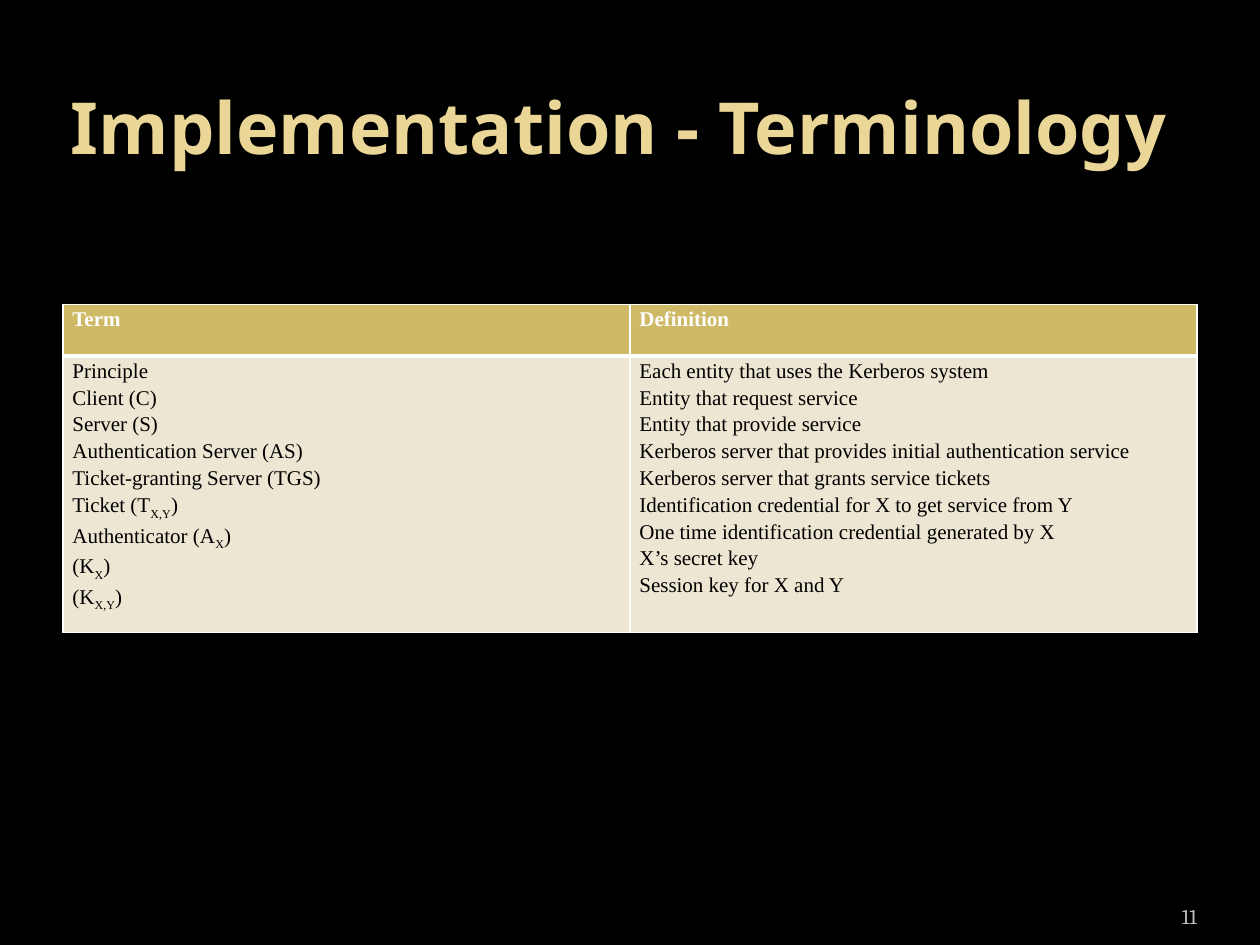
from lxml import etree
from pptx import Presentation
from pptx.dml.color import RGBColor
from pptx.enum import text as t
from pptx.oxml.ns import qn
from pptx.util import Cm, Pt

SERIF = "Times New Roman"
TERMS = [
    ("Principle", "Each entity that uses the Kerberos system"),
    ("Client (C)", "Entity that request service"),
    ("Server (S)", "Entity that provide service"),
    ("Authentication Server (AS)",
     "Kerberos server that provides initial authentication service"),
    ("Ticket-granting Server (TGS)", "Kerberos server that grants service tickets"),
    ("Ticket (T|X,Y|)", "Identification credential for X to get service from Y"),
    ("Authenticator (A|X|)", "One time identification credential generated by X"),
    ("(K|X|)", "X’s secret key"),
    ("(K|X,Y|)", "Session key for X and Y"),
]


def color(code):
    return RGBColor.from_string(code)


def style(run, size, face, code, bold=False):
    font = run.font
    font.size, font.name, font.bold = Pt(size), face, bold
    font.color.rgb = color(code)


def label(slide, box, words, align, anchor, look, pad=0.25):
    frame = slide.shapes.add_textbox(*map(Cm, box)).text_frame
    frame.word_wrap = True
    frame.vertical_anchor = anchor
    frame.margin_left = frame.margin_right = Cm(pad)
    frame.text = words
    para = frame.paragraphs[0]
    para.alignment = align
    style(para.runs[0], *look)


def border(cell, widths):
    props = cell._tc.get_or_add_tcPr()
    for spot, (side, width) in enumerate(zip("LRTB", widths)):
        line = etree.Element(qn(f"a:ln{side}"), w=str(Pt(width)))
        fill = etree.SubElement(line, qn("a:solidFill"))
        etree.SubElement(fill, qn("a:srgbClr"), val="FFFFFF")
        props.insert(spot, line)


def fill_cell(cell, lines, back, ink, bold, widths):
    cell.margin_left = cell.margin_right = Cm(0.19)
    cell.margin_top = cell.margin_bottom = 0
    cell.fill.solid()
    cell.fill.fore_color.rgb = color(back)
    border(cell, widths)
    frame = cell.text_frame
    frame.text = "\n".join(lines)
    for para, line in zip(frame.paragraphs, lines):
        para.line_spacing = 1.15
        parts = line.split("|")
        para.runs[0].text = parts[0]
        for part in parts[1:]:
            para.add_run().text = part
        for spot, run in enumerate(para.runs):
            style(run, 12, SERIF, ink, bold)
            if spot % 2:
                run.font._element.set("baseline", "-25000")


def glossary(slide):
    table = slide.shapes.add_table(
        2, 2, Cm(1.27), Cm(6.14), Cm(22.86), Cm(6.19)).table
    table.rows[0].height = Cm(1.04)
    table.rows[1].height = Cm(5.15)
    columns = zip(("Term", "Definition"), zip(*TERMS))
    for col, (head, lines) in enumerate(columns):
        fill_cell(table.cell(0, col), [head], "CEB966", "FFFFFF", True, (1, 1, 1, 3))
        fill_cell(table.cell(1, col), lines, "EDE6D3", "000000", False, (1, 1, 3, 1))


def main():
    deck = Presentation()
    deck.slide_width, deck.slide_height = Cm(25.4), Cm(19.05)
    slide = deck.slides.add_slide(deck.slide_layouts[6])
    back = slide.background.fill
    back.solid()
    back.fore_color.rgb = color("000000")
    label(slide, (0.84, 0.64, 23.28, 3.81), "Implementation - Terminology",
          t.PP_ALIGN.CENTER, t.MSO_ANCHOR.MIDDLE, (41, "Noto Sans", "EAD696", True))
    glossary(slide)
    label(slide, (22.02, 17.83, 2.11, 1.02), "11", t.PP_ALIGN.RIGHT,
          t.MSO_ANCHOR.BOTTOM, (12, "Cambria", "BDBDBD"), 0)
    deck.save("out.pptx")


if __name__ == "__main__":
    main()
